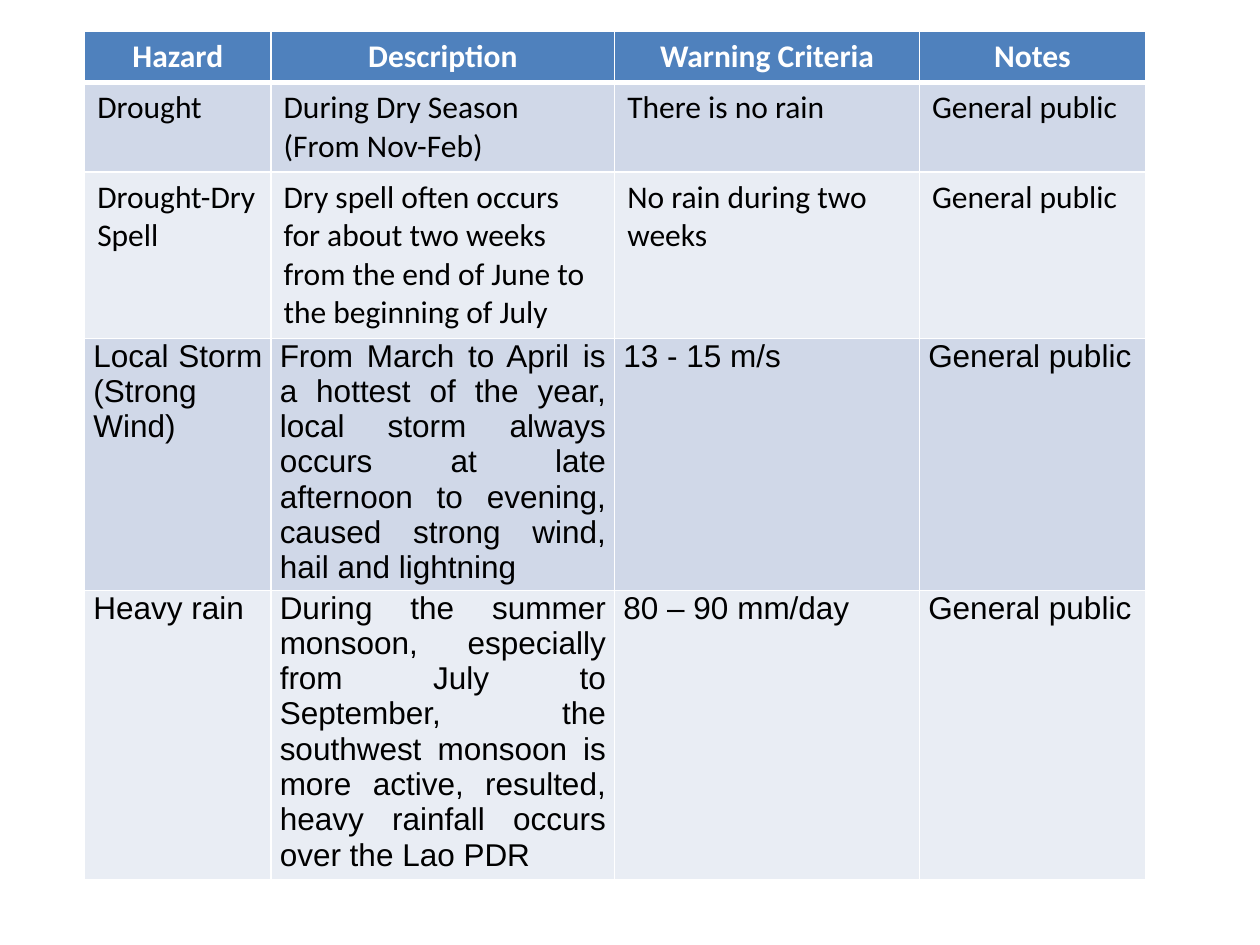
"""Build a slide with a table of weather hazards and their warning criteria."""
from pptx import Presentation
from pptx.dml.color import RGBColor
from pptx.enum.text import PP_ALIGN
from pptx.oxml import parse_xml
from pptx.oxml.ns import nsdecls
from pptx.util import Pt


def write(cell, text, font="Calibri", color="000000", bold=False, align=PP_ALIGN.LEFT):
    para = cell.text_frame.paragraphs[0]
    para.alignment = align
    span = para.add_run()
    span.text = text
    span.font.name = font
    span.font.size = Pt(18)
    span.font.bold = bold
    span.font.color.rgb = RGBColor.from_string(color)


def paint(cell, color, **borders):
    properties = cell._tc.get_or_add_tcPr()
    for side in ("L", "R", "T", "B"):
        width = Pt(borders.get(side, 1))
        properties.append(parse_xml(
            f'<a:ln{side} {nsdecls("a")} w="{width}"><a:solidFill>'
            f'<a:srgbClr val="FFFFFF"/></a:solidFill></a:ln{side}>'))
    cell.fill.solid()
    cell.fill.fore_color.rgb = RGBColor.from_string(color)


ROWS = [
    ("Hazard", "Description", "Warning Criteria", "Notes"),
    ("Drought", "During Dry Season (From Nov-Feb)", "There is no rain", "General public"),
    ("Drought-Dry Spell",
     "Dry spell often occurs for about two weeks from the end of June to the beginning of July",
     "No rain during two weeks", "General public"),
    ("Local Storm (Strong Wind)",
     "From March to April is a hottest of the year, local storm always occurs at late "
     "afternoon to evening, caused strong wind, hail and lightning",
     "13 - 15 m/s", "General public"),
    ("Heavy rain",
     "During the summer monsoon, especially from July to September, the southwest monsoon is "
     "more active, resulted, heavy rainfall occurs over the Lao PDR ",
     "80 – 90 mm/day", "General public"),
]
WIDTHS = [106.5, 196.4, 174.2, 129]
HEIGHTS = [27.5, 48.5, 89.5, 144, 165]

deck = Presentation()
deck.slide_width, deck.slide_height = Pt(720), Pt(540)
page = deck.slides.add_slide(deck.slide_layouts[6])
table = page.shapes.add_table(len(ROWS), len(WIDTHS), Pt(48.4), Pt(18),
                              Pt(sum(WIDTHS)), Pt(sum(HEIGHTS))).table
for column, width in zip(table.columns, WIDTHS):
    column.width = Pt(width)

for index, texts in enumerate(ROWS):
    table.rows[index].height = Pt(HEIGHTS[index])
    for cell, text in zip(table.rows[index].cells, texts):
        if index == 0:
            paint(cell, "4F81BD", B=3)
            write(cell, text, color="FFFFFF", bold=True, align=PP_ALIGN.CENTER)
            continue
        paint(cell, "D0D8E8" if index % 2 else "E9EDF4", T=3 if index == 1 else 1)
        if index < 3:
            write(cell, text)
        else:
            cell.margin_left = cell.margin_right = Pt(5)
            cell.margin_top = cell.margin_bottom = Pt(0)
            write(cell, text, font="Arial", align=PP_ALIGN.JUSTIFY)

deck.save("out.pptx")
